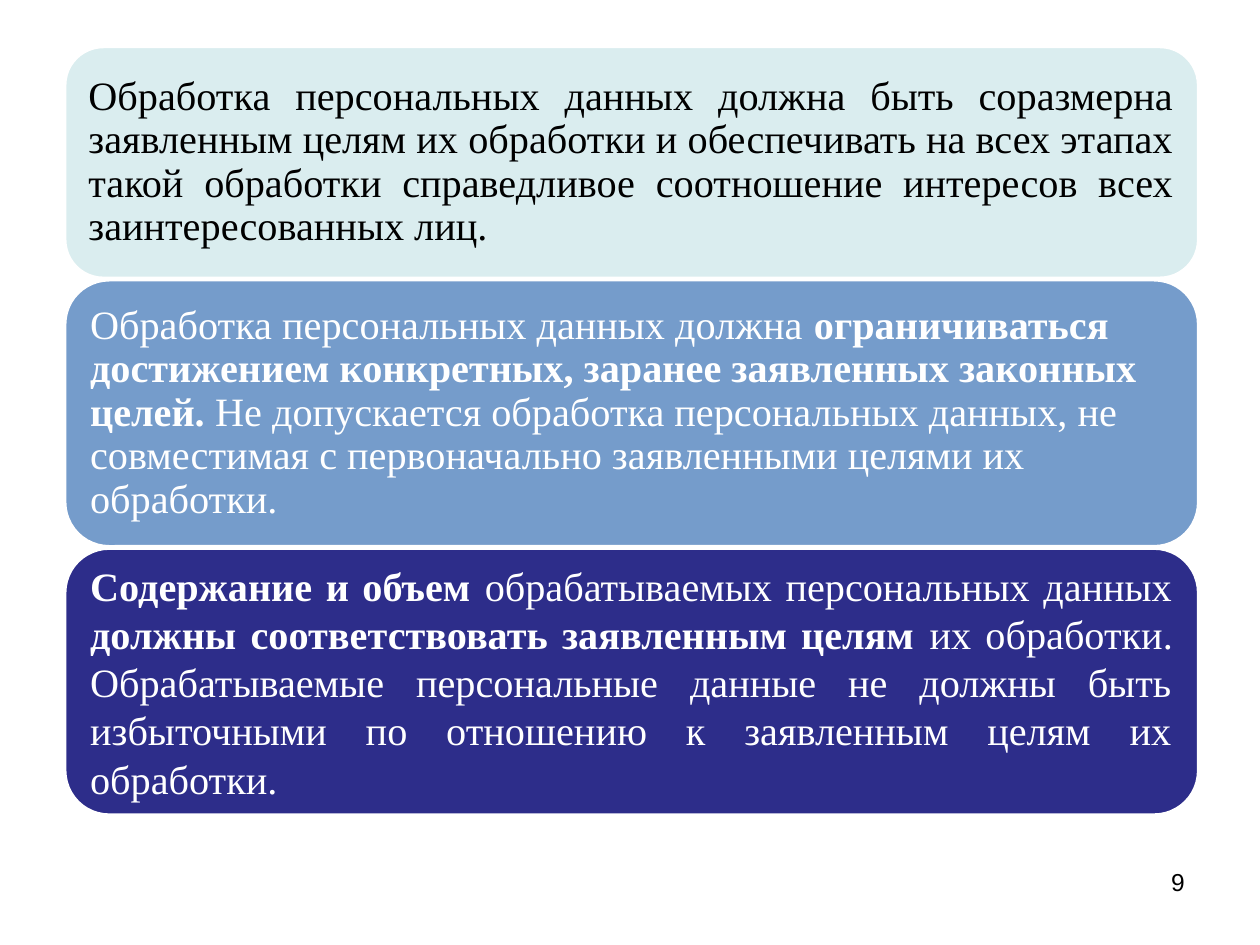
from pptx import Presentation
from pptx.dml.color import RGBColor
from pptx.enum.shapes import MSO_SHAPE
from pptx.enum.text import MSO_ANCHOR, PP_ALIGN
from pptx.util import Pt

COLORS = {"pale": "DAEDEF", "blue": "759CCB", "navy": "2D2D8A",
          "white": "FFFFFF", "black": "000000"}
LEFT, TOP, WIDTH, GAP = 37, 26.6, 648, 0.75


class Deck:
    def __init__(self):
        self.prs = Presentation()
        self.prs.slide_width, self.prs.slide_height = Pt(720), Pt(540)
        self.slide = self.prs.slides.add_slide(self.prs.slide_layouts[6])

    def color(self, name):
        return RGBColor.from_string(COLORS[name])

    def fill_text(self, para, parts, font, size, color):
        for text, bold in parts:
            run = para.add_run()
            run.text = text
            run.font.name, run.font.size, run.font.bold = font, Pt(size), bold
            run.font.color.rgb = self.color(color)

    def card(self, top, height, fill, ink, align, spacing, parts):
        card = self.slide.shapes.add_shape(
            MSO_SHAPE.ROUNDED_RECTANGLE, Pt(LEFT), Pt(top), Pt(WIDTH), Pt(height))
        card.shadow.inherit = False
        card.fill.solid()
        card.fill.fore_color.rgb = self.color(fill)
        card.line.color.rgb = self.color("white")
        card.line.width = Pt(2)
        frame = card.text_frame
        frame.word_wrap = True
        frame.vertical_anchor = MSO_ANCHOR.MIDDLE
        frame.margin_left = frame.margin_right = Pt(7.2)
        frame.margin_top = frame.margin_bottom = Pt(7.2)
        para = frame.paragraphs[0]
        para.alignment, para.line_spacing = align, spacing
        self.fill_text(para, parts, "Times New Roman", 23, ink)

    def number(self, text):
        box = self.slide.shapes.add_textbox(Pt(516), Pt(492), Pt(168), Pt(37.5))
        box.text_frame.word_wrap = True
        para = box.text_frame.paragraphs[0]
        para.alignment = PP_ALIGN.RIGHT
        self.fill_text(para, [(text, False)], "Arial", 14, "black")


def main():
    deck = Deck()
    cards = [
        (132.5, "pale", "black", PP_ALIGN.JUSTIFY, 0.9, [
            ("Обработка персональных данных должна быть соразмерна заявленным "
             "целям их обработки и обеспечивать на всех этапах такой обработки "
             "справедливое соотношение интересов всех заинтересованных лиц.", False)]),
        (152.6, "blue", "white", PP_ALIGN.LEFT, 0.9, [
            ("Обработка персональных данных должна ", False),
            ("ограничиваться достижением конкретных, заранее заявленных "
             "законных целей. ", True),
            ("Не допускается обработка персональных данных, не совместимая "
             "с первоначально заявленными целями их обработки.", False)]),
        (152.6, "navy", "white", PP_ALIGN.JUSTIFY, 1.0, [
            ("Содержание и объем ", True),
            ("обрабатываемых персональных данных ", False),
            ("должны соответствовать заявленным целям ", True),
            ("их обработки. Обрабатываемые персональные данные не должны быть "
             "избыточными по отношению к заявленным целям их обработки.", False)]),
    ]
    top = TOP
    for height, *style in cards:
        deck.card(top, height, *style)
        top += height + GAP
    deck.number("9")
    deck.prs.save("out.pptx")


if __name__ == "__main__":
    main()
